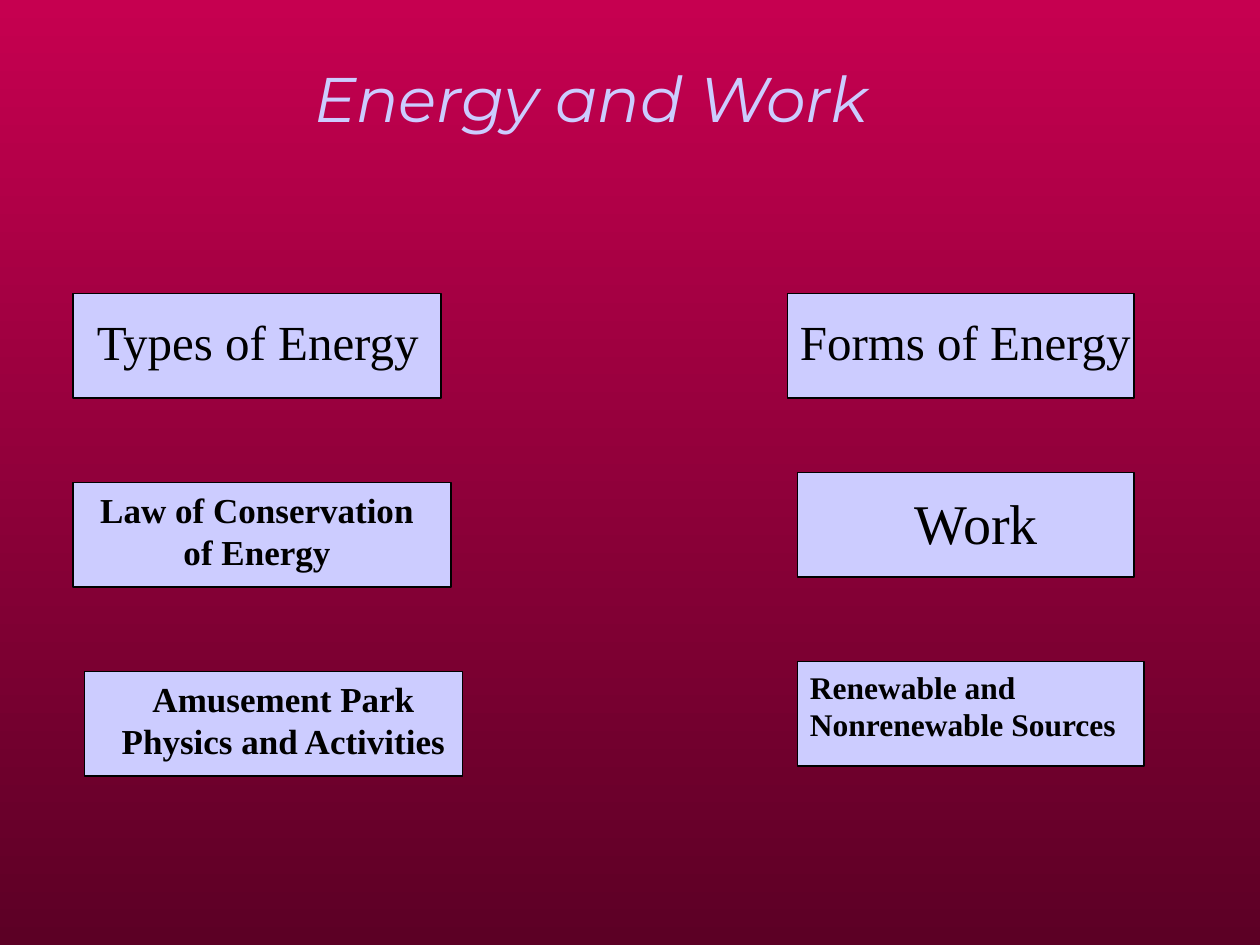
from pptx import Presentation
from pptx.dml.color import RGBColor
from pptx.enum.shapes import MSO_SHAPE
from pptx.enum.text import MSO_ANCHOR, PP_ALIGN
from pptx.util import Inches, Pt

BUTTON = MSO_SHAPE.ACTION_BUTTON_CUSTOM
LEFT, CENTER = PP_ALIGN.LEFT, PP_ALIGN.CENTER
TOP = MSO_ANCHOR.TOP

LAVENDER = RGBColor(0xCC, 0xCC, 0xFF)
BLACK = RGBColor(0x00, 0x00, 0x00)
CRIMSON = RGBColor(0xC6, 0x00, 0x50)
DARK_RED = RGBColor(0x5C, 0x00, 0x25)

BUTTON_HEIGHT = 0.83

# Caption, button (left, top, width), caption box (left, top, width, height),
# font size, bold, alignment
TOPICS = [
    ("Types of Energy", (0.58, 2.33, 2.92), (0.67, 2.42, 3.5, 0.57), 28, False, LEFT),
    ("Forms of Energy", (6.25, 2.33, 2.75), (6.25, 2.42, 3.08, 0.57), 28, False, LEFT),
    ("Law of Conservation of Energy", (0.58, 3.83, 3), (0.58, 3.83, 2.92, 0.77), 20, True, CENTER),
    ("Work", (6.33, 3.75, 2.67), (6.5, 3.83, 2.5, 0.63), 32, False, CENTER),
    ("Amusement Park Physics and Activities", (0.67, 5.33, 3), (0.75, 5.33, 3, 0.77), 20, True, CENTER),
    ("Renewable and Nonrenewable Sources", (6.33, 5.25, 2.75), (6.33, 5.25, 2.92, 0.7), 18, True, LEFT),
]


def write_text(shape, text, font_name, size, color, alignment):
    frame = shape.text_frame
    frame.vertical_anchor = TOP
    frame.text = text
    paragraph = frame.paragraphs[0]
    paragraph.alignment = alignment
    paragraph.font.name = font_name
    paragraph.font.size = Pt(size)
    paragraph.font.color.rgb = color
    return paragraph


presentation = Presentation()
presentation.slide_width = Inches(10)
presentation.slide_height = Inches(7.5)
slide = presentation.slides.add_slide(presentation.slide_layouts[5])

background = slide.background.fill
background.gradient()
background.gradient_angle = 270
for stop, color in zip(background.gradient_stops, (CRIMSON, DARK_RED)):
    stop.color.rgb = color

title = slide.shapes.title
title.left, title.top = Inches(1.17), Inches(0.42)
title.width, title.height = Inches(7.17), Inches(1.18)
heading = write_text(title, "Energy and Work ", "Montserrat", 36, LAVENDER, CENTER)
heading.font.italic = True
title.text_frame.word_wrap = False

for text, button_place, caption_place, size, bold, alignment in TOPICS:
    button = slide.shapes.add_shape(
        BUTTON, *map(Inches, button_place), Inches(BUTTON_HEIGHT))
    button.shadow.inherit = False
    button.fill.solid()
    button.fill.fore_color.rgb = LAVENDER
    button.line.color.rgb = BLACK
    button.line.width = Pt(0.75)

    caption = slide.shapes.add_textbox(*map(Inches, caption_place))
    caption.text_frame.word_wrap = True
    paragraph = write_text(caption, text, "Times New Roman", size, BLACK, alignment)
    paragraph.font.bold = bold

presentation.save("out.pptx")
